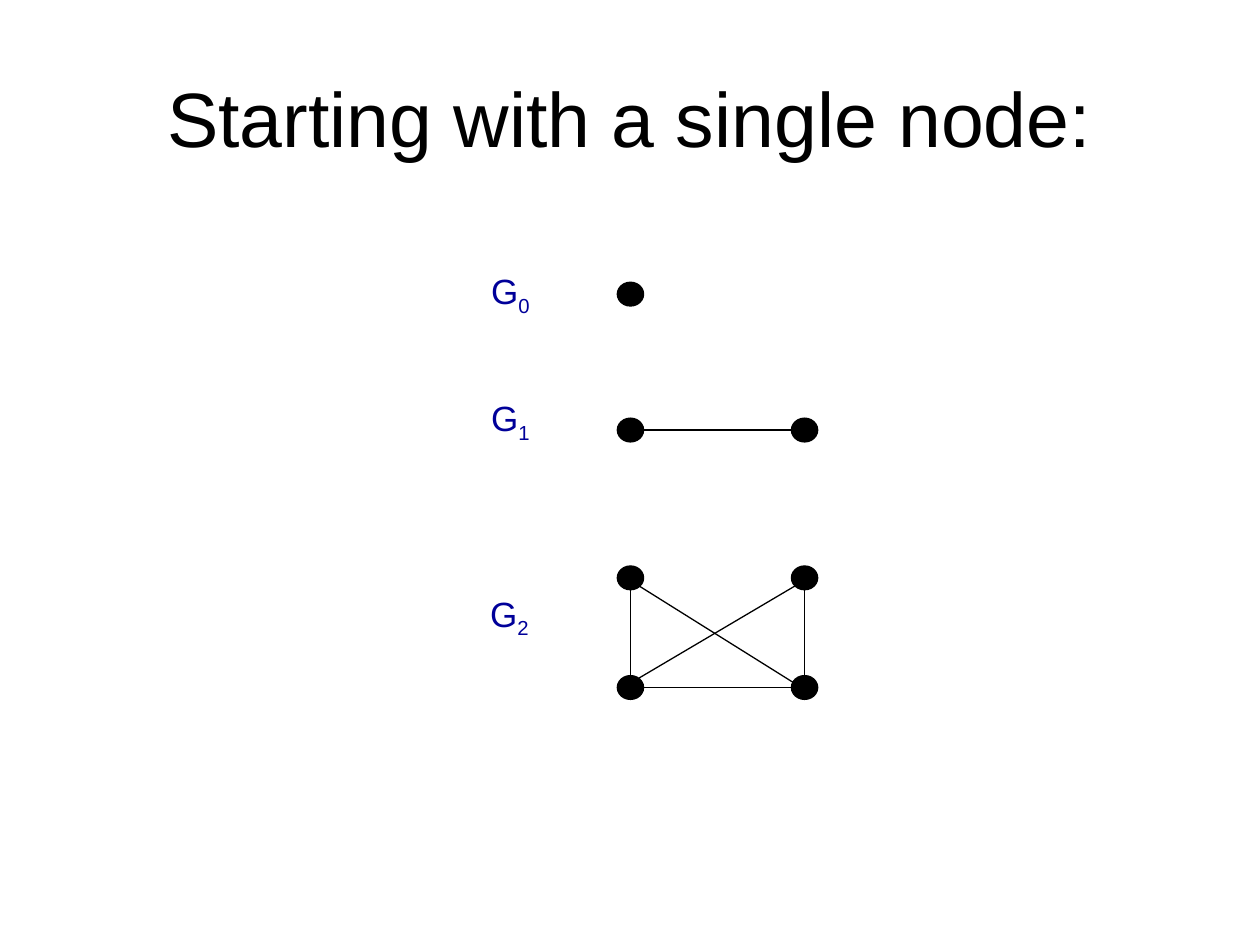
"""Build a slide that shows the graphs G0, G1 and G2 grown from one node."""
from lxml.etree import SubElement
from pptx import Presentation
from pptx.dml.color import RGBColor
from pptx.enum.shapes import MSO_CONNECTOR, MSO_SHAPE
from pptx.enum.text import MSO_ANCHOR, PP_ALIGN
from pptx.oxml.ns import qn
from pptx.util import Cm, Pt

COLORS = {"ink": "000000", "label": "000099"}
FONT = "Arial"
TITLE = "Starting with a single node:"
LEFT, RIGHT = 12.71, 16.22
ROWS = {"single": 5.93, "pair": 8.67, "upper": 11.65, "lower": 13.86}
NODES = [
    (LEFT, "single"),
    (LEFT, "pair"), (RIGHT, "pair"),
    (LEFT, "upper"), (RIGHT, "upper"),
    (LEFT, "lower"), (RIGHT, "lower"),
]
NODE_W, NODE_H = 0.53, 0.48
EDGES = [
    (LEFT, ROWS["pair"], RIGHT, ROWS["pair"]),
    (LEFT, ROWS["lower"], RIGHT, ROWS["lower"]),
    (LEFT, 13.61, LEFT, 11.89),
    (RIGHT, 13.61, RIGHT, 11.81),
    (12.88, 11.81, 16.41, 14.02),
    (12.88, 13.67, 16.03, 11.81),
]
LABELS = [("0", 9.65, 5.31), ("1", 9.65, 7.87), ("2", 9.63, 11.81)]


def color(name):
    return RGBColor.from_string(COLORS[name])


def add_text(slide, box, parts, size, tone):
    frame = slide.shapes.add_textbox(*map(Cm, box)).text_frame
    frame.word_wrap = True
    para = frame.paragraphs[0]
    para.font.name = FONT
    para.font.size = Pt(size)
    para.font.color.rgb = color(tone)
    for part in parts:
        para.add_run().text = part
    return frame


def add_title(slide):
    frame = add_text(slide, (1.27, 0.76, 22.86, 3.18), [TITLE], 44, "ink")
    frame.vertical_anchor = MSO_ANCHOR.MIDDLE
    frame.paragraphs[0].alignment = PP_ALIGN.CENTER


def add_label(slide, index, left, top):
    frame = add_text(slide, (left, top, 1.57, 1.12), ["G", index], 20, "label")
    sub = frame.paragraphs[0].runs[1]
    sub.font._element.set("baseline", "-25000")


def add_edge(slide, ends):
    line = slide.shapes.add_connector(MSO_CONNECTOR.STRAIGHT, *map(Cm, ends))
    line.line.color.rgb = color("ink")
    line.line.width = Pt(0.75)
    SubElement(line._element.spPr, qn("a:effectLst"))


def add_node(slide, x, row):
    box = (x - NODE_W / 2, ROWS[row] - NODE_H / 2, NODE_W, NODE_H)
    node = slide.shapes.add_shape(MSO_SHAPE.OVAL, *map(Cm, box))
    node.shadow.inherit = False
    node.fill.solid()
    node.fill.fore_color.rgb = color("ink")
    node.line.color.rgb = color("ink")
    node.line.width = Pt(0.75)


def main():
    deck = Presentation()
    deck.slide_width, deck.slide_height = Cm(25.4), Cm(19.05)
    slide = deck.slides.add_slide(deck.slide_layouts[6])
    add_title(slide)
    for ends in EDGES:
        add_edge(slide, ends)
    for node in NODES:
        add_node(slide, *node)
    for label in LABELS:
        add_label(slide, *label)
    deck.save("out.pptx")


if __name__ == "__main__":
    main()
